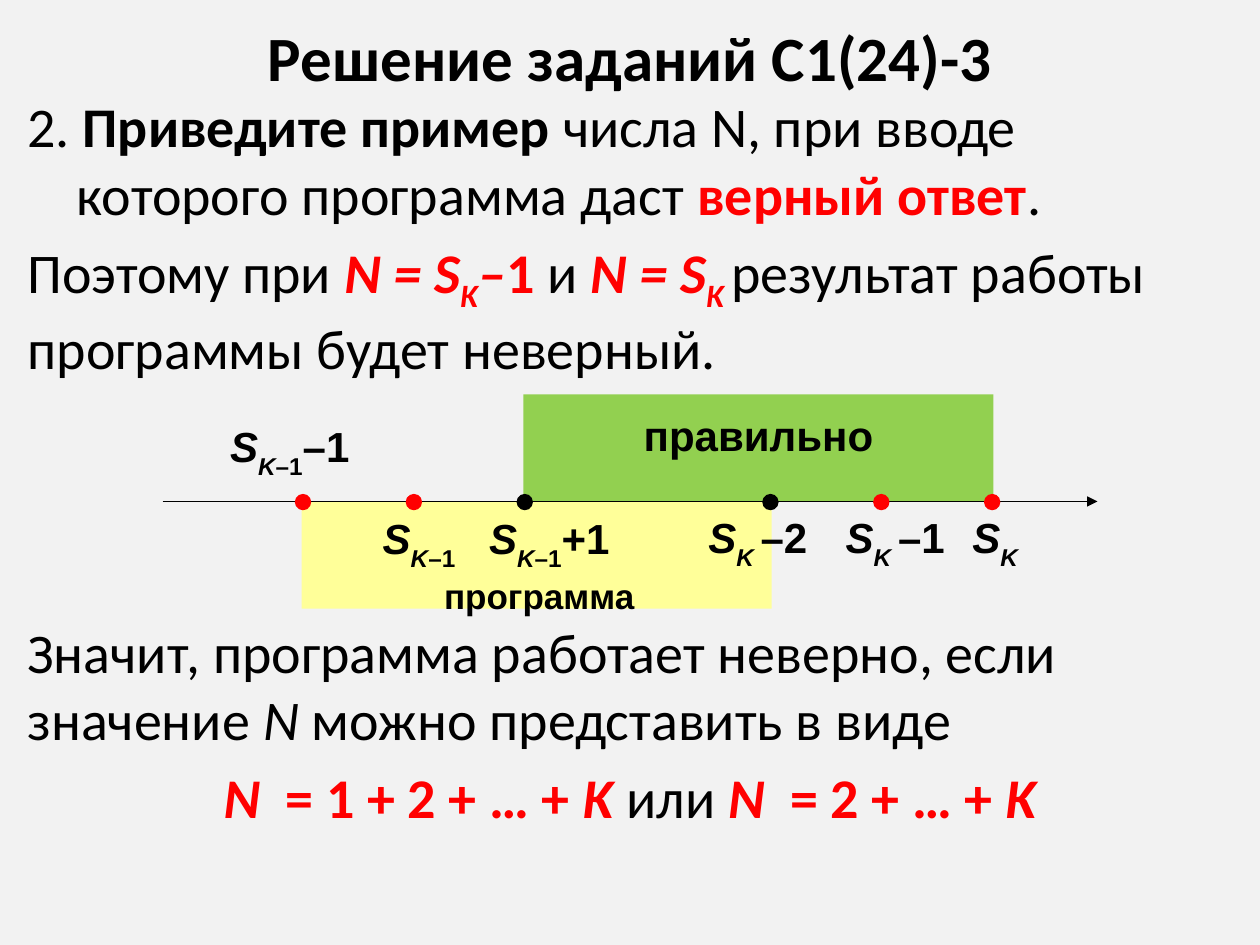
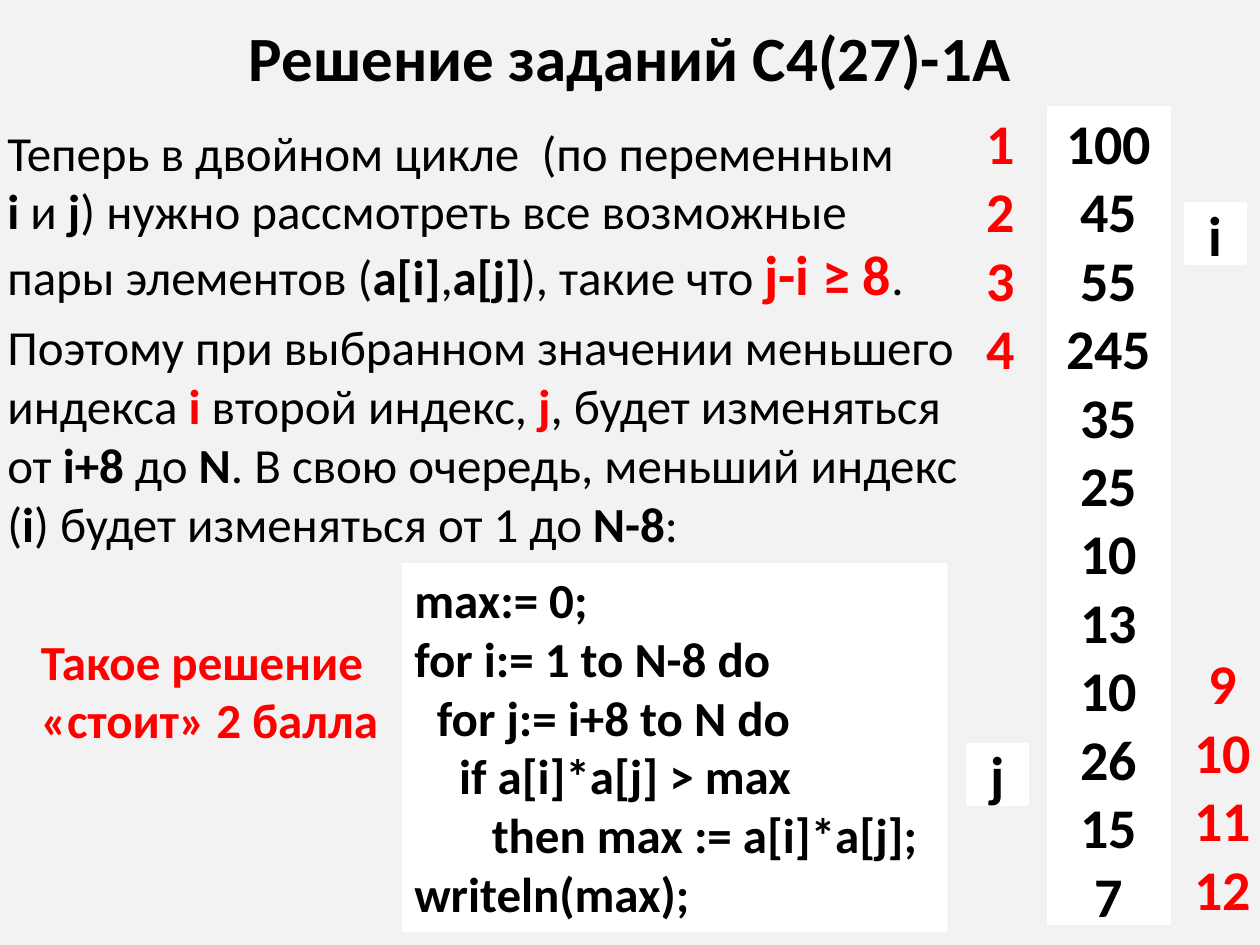
from dataclasses import dataclass
from typing import NamedTuple, Optional

from lxml import etree
from pptx import Presentation
from pptx.dml.color import RGBColor
from pptx.enum.shapes import MSO_CONNECTOR as Connector, MSO_SHAPE as Shape
from pptx.enum.text import MSO_ANCHOR as Anchor, PP_ALIGN as Align
from pptx.oxml.ns import qn
from pptx.util import Inches, Pt

# Shared look
BACKGROUND, WHITE, BLACK, RED = "F2F2F2", "FFFFFF", "000000", "FF0000"
GREEN, YELLOW = "92D050", "FFFF99"
BODY_FONT, DIAGRAM_FONT = "Calibri", "Arial"
NO_STYLE_TABLE = "{2D5ABB26-0587-4C30-8999-92F81FD0307C}"

# Grid of 100 columns by 75 rows
WIDTH, HEIGHT = Inches(10), Inches(7.5)
COLUMN, ROW = WIDTH / 100, HEIGHT / 75


class Area(NamedTuple):
    left: float
    top: float
    width: float
    height: float

    def lengths(self) -> tuple[int, ...]:
        units = (COLUMN, ROW, COLUMN, ROW)
        return tuple(round(value * unit) for value, unit in zip(self, units))


class Run(NamedTuple):
    text: str
    bold: Optional[bool] = None
    italic: Optional[bool] = None
    color: Optional[str] = None
    size: Optional[float] = None
    baseline: int = 0


@dataclass
class Style:
    size: float
    font: str = BODY_FONT
    color: str = BLACK
    bold: bool = False
    align: Align = Align.LEFT
    space_before: float = 0
    anchor: Anchor = Anchor.TOP
    inset: tuple[float, float] = (1, 0.5)


@dataclass
class Paragraph:
    runs: list[Run]
    align: Optional[Align] = None
    margin: float = 0
    indent: float = 0


@dataclass
class Point:
    column: float
    color: str
    label: Area
    runs: list[Run]


@dataclass
class NumberColumn:
    area: Area
    numbers: list[int]
    color: str
    fill: Optional[str] = None


def rgb(color: str) -> RGBColor:
    return RGBColor.from_string(color)


def bold(text: str) -> Run:
    return Run(text, bold=True)


def red(text: str, italic: bool = False, **extra) -> Run:
    return Run(text, bold=True, italic=italic, color=RED, **extra)


def plain(text: str, **options) -> Paragraph:
    return Paragraph([Run(text)], **options)


# Text
def add_run(paragraph, run: Run) -> None:
    for index, line in enumerate(run.text.split("\n")):
        if index:
            paragraph.add_line_break()
        if not line:
            continue
        piece = paragraph.add_run()
        piece.text = line
        font = piece.font
        font.bold, font.italic = run.bold, run.italic
        if run.color:
            font.color.rgb = rgb(run.color)
        if run.size:
            font.size = Pt(run.size)
        if run.baseline:
            piece._r.get_or_add_rPr().set("baseline", str(run.baseline * 1000))


def write(frame, paragraphs: list[Paragraph], style: Style) -> None:
    for index, content in enumerate(paragraphs):
        paragraph = frame.paragraphs[0] if index == 0 else frame.add_paragraph()
        paragraph.alignment = content.align or style.align
        if index:
            paragraph.space_before = Pt(style.space_before)
        if content.margin:
            properties = paragraph._p.get_or_add_pPr()
            properties.set("marL", str(round(content.margin * COLUMN)))
            properties.set("indent", str(round(content.indent * COLUMN)))
        font = paragraph.font
        font.name, font.size, font.bold = style.font, Pt(style.size), style.bold
        font.color.rgb = rgb(style.color)
        for run in content.runs:
            add_run(paragraph, run)


def fill_frame(frame, paragraphs: list[Paragraph], style: Style) -> None:
    frame.word_wrap = True
    frame.vertical_anchor = style.anchor
    frame.margin_left = frame.margin_right = round(style.inset[0] * COLUMN)
    frame.margin_top = frame.margin_bottom = round(style.inset[1] * ROW)
    write(frame, paragraphs, style)


def add_text(slide, area: Area, paragraphs: list[Paragraph], style: Style) -> None:
    box = slide.shapes.add_textbox(*area.lengths())
    fill_frame(box.text_frame, paragraphs, style)


# Shapes
def add_filled(slide, kind: Shape, area: Area, color: str):
    shape = slide.shapes.add_shape(kind, *area.lengths())
    shape.shadow.inherit = False
    shape.fill.solid()
    shape.fill.fore_color.rgb = rgb(color)
    shape.line.fill.background()
    return shape


def add_axis(slide, left: float, right: float, row: float) -> None:
    start, end, level = round(left * COLUMN), round(right * COLUMN), round(row * ROW)
    axis = slide.shapes.add_connector(Connector.STRAIGHT, start, level, end, level)
    axis.line.color.rgb = rgb(BLACK)
    axis.line.width = Pt(0.75)
    etree.SubElement(axis.line._get_or_add_ln(), qn("a:tailEnd"), type="triangle")
    etree.SubElement(axis._element.spPr, qn("a:effectLst"))


def add_number_column(slide, column: NumberColumn) -> None:
    frame = slide.shapes.add_table(1, 1, *column.area.lengths())
    table = frame.table
    table.first_row = table.horz_banding = False
    table._tbl.tblPr.find(qn("a:tableStyleId")).text = NO_STYLE_TABLE
    cell = table.cell(0, 0)
    if column.fill:
        cell.fill.solid()
        cell.fill.fore_color.rgb = rgb(column.fill)
    else:
        cell.fill.background()
    cell.margin_left = cell.margin_right = round(0.5 * COLUMN)
    cell.margin_top, cell.margin_bottom = round(0.4 * ROW), 0
    style = Style(32, color=column.color, bold=True, align=Align.CENTER)
    write(cell.text_frame, [plain(str(number)) for number in column.numbers], style)


def add_titled_slide(presentation, title: str):
    slide = presentation.slides.add_slide(presentation.slide_layouts[6])
    slide.background.fill.solid()
    slide.background.fill.fore_color.rgb = rgb(BACKGROUND)
    style = Style(36, bold=True, align=Align.CENTER, anchor=Anchor.MIDDLE)
    add_text(slide, Area(5, 0.6, 90, 7.8), [plain(title)], style)
    return slide


# Slide 1: number line
def s_with(subscript: str, number: str = "", tail: str = "") -> list[Run]:
    runs = [Run("S", italic=True), Run(subscript, italic=True, baseline=-30)]
    if number:
        runs.append(Run(number, baseline=-30))
    return runs + ([Run(tail)] if tail else [])


def add_number_line(slide) -> None:
    axis_row, step, dot = 39.8, 8.8, 1.3
    first, second = 24.05, 61.15
    points = [
        Point(first, RED, Area(17, 33.4, 12, 4.7), s_with("K", "–1", "–1")),
        Point(first + step, RED, Area(29.3, 40.7, 7.9, 4.7), s_with("K", "–1")),
        Point(first + 2 * step, BLACK, Area(37.6, 40.7, 12, 4.7), s_with("K", "–1", "+1")),
        Point(second, BLACK, Area(55.3, 40.6, 9.7, 4.7), s_with("K ", tail="–2")),
        Point(second + step, RED, Area(66, 40.6, 10.1, 4.7), s_with("K ", tail="–1")),
        Point(second + 2 * step, RED, Area(75.5, 40.6, 7.5, 4.7), s_with("K ")),
    ]
    # Intervals span four points each, below and above the axis
    interval_width, interval_height = 37.3, 8.5
    for start, top, color in ((0, axis_row, YELLOW),
                              (2, axis_row - interval_height, GREEN)):
        area = Area(points[start].column - 0.1, top, interval_width, interval_height)
        add_filled(slide, Shape.RECTANGLE, area, color)
    add_axis(slide, 12.9, 87.1, axis_row)

    label_style = Style(24, DIAGRAM_FONT, bold=True, align=Align.CENTER, inset=(0, 0))
    for point in points:
        area = Area(point.column - dot / 2, axis_row - dot / 2 + 0.05, dot, dot)
        add_filled(slide, Shape.OVAL, area, point.color)
        add_text(slide, point.label, [Paragraph(point.runs)], label_style)
    for area, name, size in ((Area(47.3, 32.5, 25.8, 4.7), "правильно", 24),
                             (Area(29.9, 45.6, 25.8, 4.7), "программа", 20)):
        style = Style(size, DIAGRAM_FONT, bold=True, align=Align.CENTER, inset=(0, 0))
        add_text(slide, area, [plain(name)], style)


def build_number_line_slide(presentation) -> None:
    slide = add_titled_slide(presentation, "Решение заданий С1(24)-3")
    style = Style(32, space_before=6.4)
    task = [
        Paragraph([Run("2. "), bold("Приведите пример "),
                   Run("числа N, при вводе которого программа даст "),
                   red("верный ответ"), Run(".")], margin=3.9, indent=-3.9),
        Paragraph([Run("Поэтому при "), red("N = S", True), red("K", True, baseline=-25),
                   red("–", True), red("1 "), Run("и "), red("N = S", True),
                   red("K ", True, baseline=-25),
                   Run("результат работы программы будет неверный.")]),
    ]
    conclusion = [
        Paragraph([Run("Значит, программа работает неверно, если значение "),
                   Run("N", italic=True), Run(" можно представить в виде")]),
        Paragraph([red("N  ", True), red("= 1 + 2 + … + "), red("K ", True), Run("или "),
                   red("N  ", True), red("= 2 + … + "), red("K", True)],
                  align=Align.CENTER),
    ]
    add_text(slide, Area(1.2, 6.8, 97.6, 24), task, style)
    add_text(slide, Area(1.2, 48.5, 97.6, 25), conclusion, style)
    add_number_line(slide)


# Slide 2: double loop
def build_double_loop_slide(presentation) -> None:
    slide = add_titled_slide(presentation, "Решение заданий С4(27)-1A")
    explanation = [
        Paragraph([Run("Теперь в двойном цикле  (по переменным\n"), bold("i "), Run("и "),
                   bold("j"), Run(") нужно рассмотреть все возможные\nпары элементов ("),
                   bold("a[i]"), Run(","), bold("a[j]"), Run("), такие что "),
                   red("j-i ≥ 8", size=32), Run(".")]),
        Paragraph([Run("Поэтому при выбранном значении меньшего индекса "), red("i"),
                   Run(" второй индекс, "), red("j"), Run(", будет изменяться от "),
                   bold("i+8"), Run(" до "), bold("N"),
                   Run(". В свою очередь, меньший индекс ("), bold("i"),
                   Run(") будет изменяться от 1 до "), bold("N-8"), Run(":")]),
    ]
    add_text(slide, Area(-0.4, 9.2, 79.5, 35), explanation, Style(28, space_before=5.6))
    add_text(slide, Area(2.25, 49.6, 29.5, 10.5), [plain("Такое решение\n«стоит» 2 балла")],
             Style(28, color=RED, bold=True))

    # Program, each line with its indent in columns
    code = [("max:= 0;", 0), ("for i:= 1 to N-8 do", 0), ("for j:= i+8 to N do", 1.8),
            ("if a[i]*a[j] > max", 3.55), ("then max := a[i]*a[j];", 6.15),
            ("writeln(max);", 0)]
    panel = add_filled(slide, Shape.RECTANGLE, Area(31.9, 44.7, 43.3, 29.3), WHITE)
    fill_frame(panel.text_frame, [plain(line, margin=indent) for line, indent in code],
               Style(28, bold=True))

    # Array values with their indexes
    values = [100, 45, 55, 245, 35, 25, 10, 13, 10, 26, 15, 7]
    for column in (NumberColumn(Area(83.1, 8.4, 9.8, 65), values, BLACK, WHITE),
                   NumberColumn(Area(76.8, 8.4, 5.3, 22.3), [1, 2, 3, 4], RED),
                   NumberColumn(Area(93.3, 51.3, 7.5, 22.3), [9, 10, 11, 12], RED)):
        add_number_column(slide, column)
    marker_style = Style(32, bold=True, align=Align.CENTER, anchor=Anchor.MIDDLE)
    for name, left, top in (("j", 76.8, 59.1), ("i", 94.1, 16.2)):
        marker = add_filled(slide, Shape.RECTANGLE, Area(left, top, 4.7, 4.7), WHITE)
        marker.line.color.rgb = rgb(WHITE)
        marker.line.width = Pt(2)
        fill_frame(marker.text_frame, [plain(name)], marker_style)


def main() -> None:
    presentation = Presentation()
    presentation.slide_width, presentation.slide_height = WIDTH, HEIGHT
    build_number_line_slide(presentation)
    build_double_loop_slide(presentation)
    presentation.save("out.pptx")


if __name__ == "__main__":
    main()
